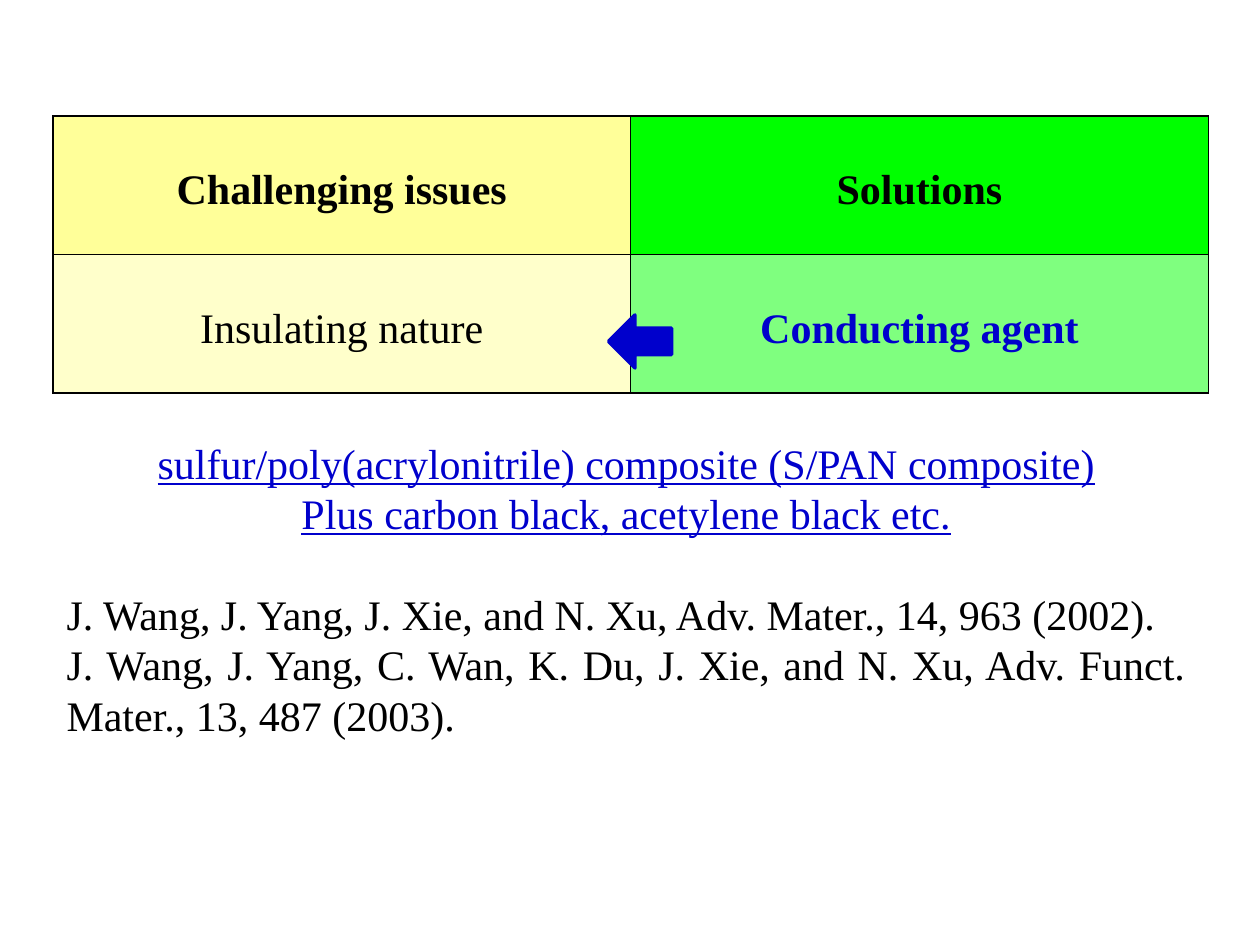
from lxml import etree
from pptx import Presentation
from pptx.dml.color import RGBColor
from pptx.enum.shapes import MSO_SHAPE
from pptx.enum.text import PP_ALIGN
from pptx.oxml.ns import qn
from pptx.util import Inches, Pt

CENTER, JUSTIFY = PP_ALIGN.CENTER, PP_ALIGN.JUSTIFY
LEFT_ARROW = MSO_SHAPE.LEFT_ARROW

FONT = "Times New Roman"
TEXT_SIZE = Pt(24)
LINE_HEIGHT = Pt(28.8)
COLORS = {"black": "000000", "blue": "0000CC", "yellow": "FFFF99", "green": "00FF00"}

# text, text color, bold, fill, fill opacity in percent
TABLE_ROWS = [
    [("Challenging issues", "black", True, "yellow", 100),
     ("Solutions", "black", True, "green", 100)],
    [("Insulating nature", "black", False, "yellow", 50),
     ("Conducting agent", "blue", True, "green", 50)],
]
MATERIALS = [
    "sulfur/poly(acrylonitrile) composite (S/PAN composite)",
    "Plus carbon black, acetylene black etc.",
]
REFERENCES = [
    "J. Wang, J. Yang, J. Xie, and N. Xu, Adv. Mater., 14, 963 (2002).",
    "J. Wang, J. Yang, C. Wan, K. Du, J. Xie, and N. Xu, Adv. Funct. Mater., 13, 487 (2003).",
]


def rgb(name):
    return RGBColor.from_string(COLORS[name])


def write(paragraph, text, color, align, bold=False, underline=False):
    paragraph.alignment = align
    run = paragraph.add_run()
    run.text = text
    font = run.font
    font.name, font.size = FONT, TEXT_SIZE
    font.bold, font.underline = bold, underline
    font.color.rgb = rgb(color)


def fill_cell(cell, color, opacity):
    cell.fill.solid()
    cell.fill.fore_color.rgb = rgb(color)
    properties = cell._tc.get_or_add_tcPr()
    if opacity < 100:
        color_element = properties.find(qn("a:solidFill"))[0]
        etree.SubElement(color_element, qn("a:alpha"), val=str(opacity * 1000))


def border_cell(cell):
    properties = cell._tc.get_or_add_tcPr()
    for index, side in enumerate(("lnL", "lnR", "lnT", "lnB")):
        line = etree.Element(qn(f"a:{side}"), w=str(Pt(1)))
        solid = etree.SubElement(line, qn("a:solidFill"))
        etree.SubElement(solid, qn("a:srgbClr"), val=COLORS["black"])
        properties.insert(index, line)


def add_issue_table(slide, left, top, width, height):
    row_count, column_count = len(TABLE_ROWS), len(TABLE_ROWS[0])
    table = slide.shapes.add_table(row_count, column_count, left, top, width, height).table
    for row, entries in enumerate(TABLE_ROWS):
        for column, (text, color, bold, fill, opacity) in enumerate(entries):
            cell = table.cell(row, column)
            cell.margin_top = Inches(0.41)
            write(cell.text_frame.paragraphs[0], text, color, CENTER, bold=bold)
            fill_cell(cell, fill, opacity)
            border_cell(cell)


def add_notes_on_materials(slide, left, top, width, height):
    """Underlined materials, then the literature references one line below."""
    frame = slide.shapes.add_textbox(left, top, width, height).text_frame
    frame.word_wrap = True
    lines = [(text, "blue", CENTER, True) for text in MATERIALS]
    lines += [(text, "black", JUSTIFY, False) for text in REFERENCES]
    for index, (text, color, align, underline) in enumerate(lines):
        paragraph = frame.add_paragraph() if index else frame.paragraphs[0]
        paragraph.line_spacing = LINE_HEIGHT
        if index == len(MATERIALS):
            paragraph.space_before = LINE_HEIGHT
        write(paragraph, text, color, align, underline=underline)


def add_solution_arrow(slide, left, top, width, height):
    arrow = slide.shapes.add_shape(LEFT_ARROW, left, top, width, height)
    arrow.shadow.inherit = False
    arrow.fill.solid()
    arrow.fill.fore_color.rgb = rgb("blue")
    arrow.line.color.rgb = rgb("blue")
    arrow.line.width = Pt(2)


def main():
    presentation = Presentation()
    presentation.slide_width, presentation.slide_height = Inches(10), Inches(7.5)
    slide = presentation.slides.add_slide(presentation.slide_layouts[6])
    add_issue_table(slide, Inches(0.42), Inches(0.92), Inches(9.17), Inches(2.2))
    add_notes_on_materials(slide, Inches(0.43), Inches(3.42), Inches(9.08), Inches(2.52))
    add_solution_arrow(slide, Inches(4.83), Inches(2.5), Inches(0.5), Inches(0.42))
    presentation.save("out.pptx")


if __name__ == "__main__":
    main()
